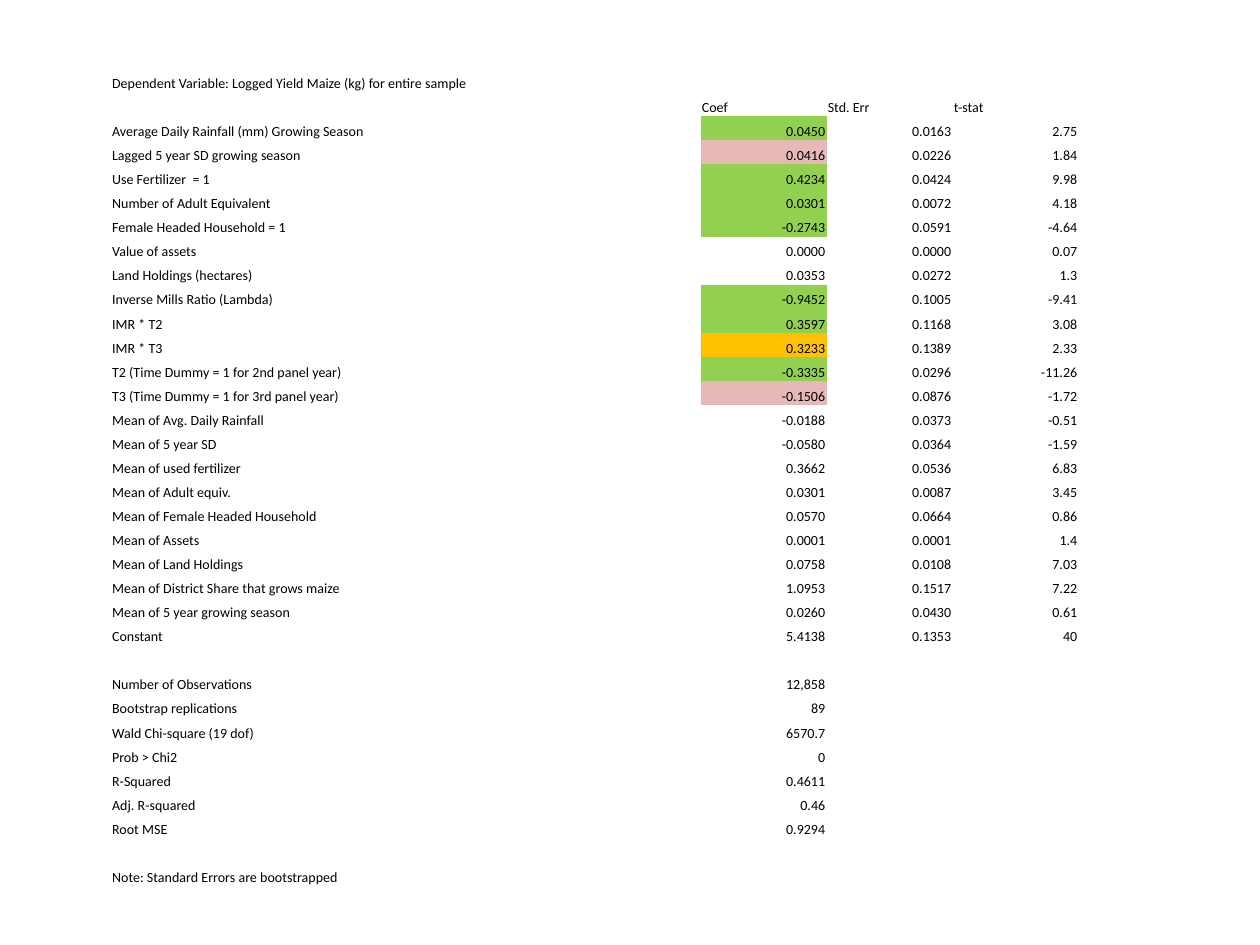
from dataclasses import dataclass

from pptx import Presentation
from pptx.dml.color import RGBColor
from pptx.enum.text import MSO_ANCHOR, PP_ALIGN
from pptx.util import Inches, Pt


@dataclass(frozen=True)
class Theme:
    font: str = "Calibri"
    size: float = 8
    ink: str = "000000"
    green: str = "92D050"
    amber: str = "FFC000"
    pink: str = "E6B8B7"
    plain_table: str = "{2D5ABB26-0587-4C30-8999-92F81FD0307C}"


THEME = Theme()

HEADING = "Dependent Variable: Logged Yield Maize (kg) for entire sample"
COLUMN_HEADS = ("", "Coef", "Std. Err", "t-stat")
NOTE = "Note: Standard Errors are bootstrapped"

ESTIMATES = [
    ("Average Daily Rainfall (mm) Growing Season", "0.0450", "0.0163", "2.75"),
    ("Lagged 5 year SD growing season", "0.0416", "0.0226", "1.84"),
    ("Use Fertilizer  = 1", "0.4234", "0.0424", "9.98"),
    ("Number of Adult Equivalent", "0.0301", "0.0072", "4.18"),
    ("Female Headed Household = 1", "-0.2743", "0.0591", "-4.64"),
    ("Value of assets", "0.0000", "0.0000", "0.07"),
    ("Land Holdings (hectares)", "0.0353", "0.0272", "1.3"),
    ("Inverse Mills Ratio (Lambda)", "-0.9452", "0.1005", "-9.41"),
    ("IMR * T2", "0.3597", "0.1168", "3.08"),
    ("IMR * T3", "0.3233", "0.1389", "2.33"),
    ("T2 (Time Dummy = 1 for 2nd panel year)", "-0.3335", "0.0296", "-11.26"),
    ("T3 (Time Dummy = 1 for 3rd panel year)", "-0.1506", "0.0876", "-1.72"),
    ("Mean of Avg. Daily Rainfall", "-0.0188", "0.0373", "-0.51"),
    ("Mean of 5 year SD", "-0.0580", "0.0364", "-1.59"),
    ("Mean of used fertilizer", "0.3662", "0.0536", "6.83"),
    ("Mean of Adult equiv.", "0.0301", "0.0087", "3.45"),
    ("Mean of Female Headed Household", "0.0570", "0.0664", "0.86"),
    ("Mean of Assets", "0.0001", "0.0001", "1.4"),
    ("Mean of Land Holdings", "0.0758", "0.0108", "7.03"),
    ("Mean of District Share that grows maize", "1.0953", "0.1517", "7.22"),
    ("Mean of 5 year growing season", "0.0260", "0.0430", "0.61"),
    ("Constant", "5.4138", "0.1353", "40"),
]
FIT_STATISTICS = [
    ("Number of Observations", "12,858"),
    ("Bootstrap replications", "89"),
    ("Wald Chi-square (19 dof)", "6570.7"),
    ("Prob > Chi2", "0"),
    ("R-Squared", "0.4611"),
    ("Adj. R-squared", "0.46"),
    ("Root MSE", "0.9294"),
]

# An empty tuple is a spacer row; the heading spans the first two rows
ROWS = [(HEADING,), (), COLUMN_HEADS, *ESTIMATES, (), *FIT_STATISTICS, (), (NOTE,)]
HEAD_ROW = 2
FIRST_ESTIMATE = HEAD_ROW + 1
HIGHLIGHTED = 12  # only the leading estimates, not the means, are coloured

COLUMN_WIDTHS = (4.68, 1, 1, 1)
TABLE_LEFT, TABLE_TOP, TABLE_HEIGHT = 0.88, 0.35, 6.69


def significance_color(t_stat):
    """Colour for the 1%, 5% and 10% levels, or None."""
    levels = ((2.57, THEME.green), (1.96, THEME.amber), (1.64, THEME.pink))
    return next((color for limit, color in levels if abs(float(t_stat)) > limit), None)


def format_cell(cell, text, align, fill=None):
    cell.margin_left = cell.margin_right = cell.margin_top = Inches(0.01)
    cell.margin_bottom = 0
    cell.vertical_anchor = MSO_ANCHOR.BOTTOM
    if fill:
        cell.fill.solid()
        cell.fill.fore_color.rgb = RGBColor.from_string(fill)
    else:
        cell.fill.background()
    paragraph = cell.text_frame.paragraphs[0]
    paragraph.alignment = align
    if text:
        paragraph.text = text
    else:
        # Keep empty cells from stretching their row
        paragraph._p.get_or_add_endParaRPr().set("sz", str(int(THEME.size * 100)))
    paragraph.font.name = THEME.font
    paragraph.font.size = Pt(THEME.size)
    paragraph.font.color.rgb = RGBColor.from_string(THEME.ink)


def add_plain_table(slide):
    frame = slide.shapes.add_table(
        len(ROWS), len(COLUMN_WIDTHS), Inches(TABLE_LEFT), Inches(TABLE_TOP),
        Inches(sum(COLUMN_WIDTHS)), Inches(TABLE_HEIGHT))
    table = frame.table
    table.first_row = table.horz_banding = False
    table._tbl.tblPr.find("{*}tableStyleId").text = THEME.plain_table
    for column, width in zip(table.columns, COLUMN_WIDTHS):
        column.width = Inches(width)
    return table


def fill_regression_table(table):
    for r, values in enumerate(ROWS):
        estimate = r - FIRST_ESTIMATE
        for c in range(len(COLUMN_WIDTHS)):
            text = values[c] if c < len(values) else ""
            is_number = c > 0 and r > HEAD_ROW
            highlighted = c == 1 and 0 <= estimate < HIGHLIGHTED
            format_cell(table.cell(r, c), text,
                        PP_ALIGN.RIGHT if is_number else PP_ALIGN.LEFT,
                        significance_color(values[3]) if highlighted else None)
    table.cell(0, 0).merge(table.cell(1, 0))


def main():
    prs = Presentation()
    prs.slide_width, prs.slide_height = Inches(10), Inches(7.5)
    slide = prs.slides.add_slide(prs.slide_layouts[6])

    # Regression results
    fill_regression_table(add_plain_table(slide))

    prs.save("out.pptx")


if __name__ == "__main__":
    main()
